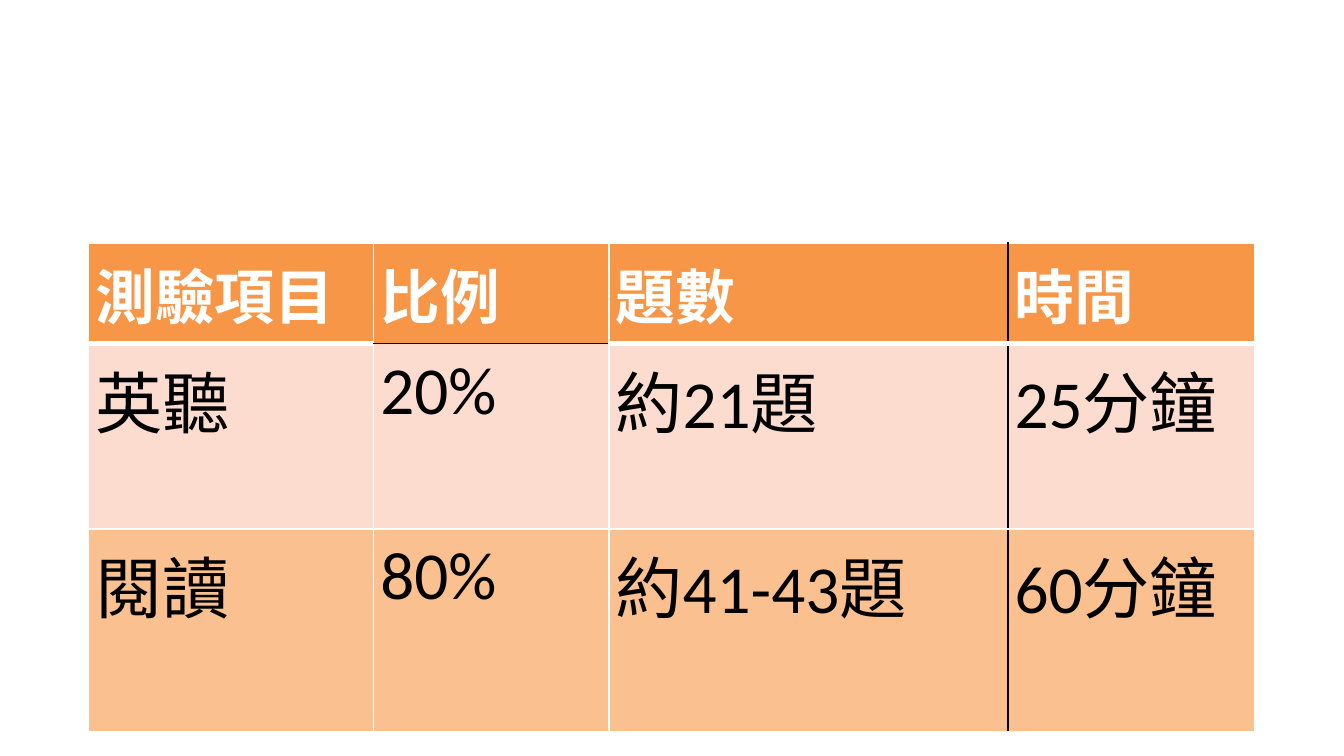
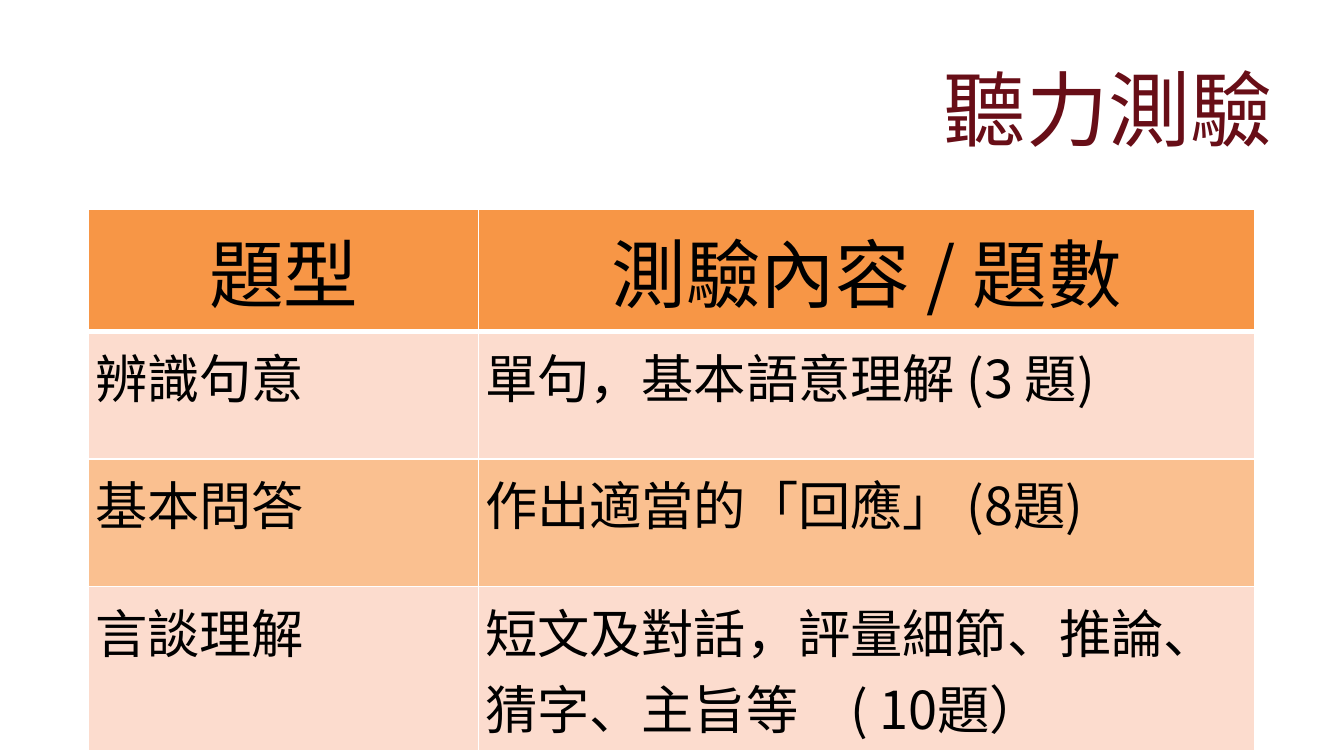
from lxml.etree import SubElement
from pptx import Presentation
from pptx.dml.color import RGBColor
from pptx.enum.text import MSO_ANCHOR, MSO_AUTO_SIZE, PP_ALIGN
from pptx.oxml.ns import qn
from pptx.util import Inches, Pt

COLORS = {"header": "F79646", "odd": "FCDCCE", "even": "FAC090",
          "white": "FFFFFF", "black": "000000", "title": "680E17"}
SLIDE_W = 10
SLIDE_H = SLIDE_W * 9 / 16
TABLE_LEFT = 0.66
INSET = Inches(0.05)
MARGINS = ("margin_left", "margin_right", "margin_top", "margin_bottom")
TITLE_BOX = (0.5, 0.31, 9.02, 0.98)
TITLE_FORMAT = {"size": Pt(44), "name": "Karla"}
CJK = "Noto Sans CJK SC"

# A cell given as a tuple holds two runs; the second one is set in Arial.
SLIDES = [
    {
        "title": None,
        "top": 1.81,
        "columns": [2.12, 1.75, 2.97, 1.84],
        "rows": [0.69, 1.38, 1.51],
        "header": {"size": Pt(32), "bold": True},
        "header_color": "white",
        "header_align": PP_ALIGN.LEFT,
        "header_fonts": ["Arial", "Arial", "Arial", "Calibri"],
        "body": {"size": Pt(36), "bold": False},
        "body_fonts": ["Arial", "Calibri", "Calibri", "Calibri"],
        "black_after_column": 2,
        "black_under_header": 1,
        "cells": [
            ["測驗項目", "比例", "題數", "時間"],
            ["英聽", "20%", ("約21", "題"), "25分鐘"],
            ["閱讀", "80%", ("約41-43", "題"), "60分鐘"],
        ],
    },
    {
        "title": "聽力測驗",
        "top": 1.56,
        "columns": [2.9, 5.78],
        "rows": [0.59, 0.95, 0.95, 0.95],
        "header": {"size": Pt(40), "bold": False},
        "header_color": "black",
        "header_align": PP_ALIGN.CENTER,
        "header_fonts": [CJK, CJK],
        "body": {"size": Pt(28), "bold": False},
        "body_fonts": [CJK, CJK],
        "black_after_column": None,
        "black_under_header": None,
        "cells": [
            ["題型", "測驗內容 / 題數"],
            ["辨識句意", "單句，基本語意理解 (3 題)"],
            ["基本問答", "作出適當的「回應」 (8題)"],
            ["言談理解", "短文及對話，評量細節、推論、猜字、主旨等　( 10題）"],
        ],
    },
]


def rgb(color):
    return RGBColor.from_string(COLORS[color])


def apply(target, values):
    for key, value in values.items():
        setattr(target, key, value)


def style_font(font, values, color):
    apply(font, values)
    font.color.rgb = rgb(color)


def cell_borders(content, row, col):
    """Return (color, width) per side, in the order the XML needs."""
    split = content["black_after_column"]
    borders = {side: ("white", 1) for side in ("lnL", "lnR", "lnT", "lnB")}
    if split is not None and col == split:
        borders["lnR"] = ("black", 1)
    if split is not None and col == split + 1:
        borders["lnL"] = ("black", 1)
    if row < 2:
        black = col == content["black_under_header"]
        borders["lnT" if row else "lnB"] = ("black", 1) if black else ("white", 3)
    return borders


def draw_borders(cell, borders):
    properties = cell._tc.get_or_add_tcPr()
    for side, (color, width) in borders.items():
        line = SubElement(properties, qn(f"a:{side}"), w=str(Pt(width)))
        fill = SubElement(line, qn("a:solidFill"))
        SubElement(fill, qn("a:srgbClr"), val=COLORS[color])


def fill_cell(cell, content, row, col):
    part = "body" if row else "header"
    text_color = "black" if row else content["header_color"]
    background = ("even", "odd")[row % 2] if row else "header"

    draw_borders(cell, cell_borders(content, row, col))
    cell.fill.solid()
    cell.fill.fore_color.rgb = rgb(background)
    apply(cell, dict.fromkeys(MARGINS, INSET))

    paragraph = cell.text_frame.paragraphs[0]
    paragraph.alignment = PP_ALIGN.LEFT if row else content["header_align"]
    words = content["cells"][row][col]
    words = words if isinstance(words, tuple) else (words,)
    for word, name in zip(words, (content[f"{part}_fonts"][col], "Arial")):
        run = paragraph.add_run()
        run.text = word
        style_font(run.font, {**content[part], "name": name}, text_color)


def add_test_table(slide, content):
    widths, heights = content["columns"], content["rows"]
    table = slide.shapes.add_table(
        len(heights), len(widths), Inches(TABLE_LEFT), Inches(content["top"]),
        Inches(sum(widths)), Inches(sum(heights))).table
    table.first_row = table.horz_banding = False
    for column, width in zip(table.columns, widths):
        column.width = Inches(width)
    for r, height in enumerate(heights):
        table.rows[r].height = Inches(height)
        for c in range(len(widths)):
            fill_cell(table.cell(r, c), content, r, c)


def set_title(slide, words):
    title = slide.shapes.title
    apply(title, dict(zip(("left", "top", "width", "height"), map(Inches, TITLE_BOX))))
    frame = title.text_frame
    frame.text = words
    apply(frame, dict.fromkeys(MARGINS, INSET))
    apply(frame, {"vertical_anchor": MSO_ANCHOR.MIDDLE, "word_wrap": True,
                  "auto_size": MSO_AUTO_SIZE.NONE})
    paragraph = frame.paragraphs[0]
    paragraph.alignment = PP_ALIGN.RIGHT
    style_font(paragraph.runs[0].font, TITLE_FORMAT, "title")


def main():
    deck = Presentation()
    deck.slide_width, deck.slide_height = Inches(SLIDE_W), Inches(SLIDE_H)
    title_only, blank = deck.slide_layouts[5], deck.slide_layouts[6]
    for content in SLIDES:
        slide = deck.slides.add_slide(title_only if content["title"] else blank)
        if content["title"]:
            set_title(slide, content["title"])
        add_test_table(slide, content)
    deck.save("out.pptx")


if __name__ == "__main__":
    main()
